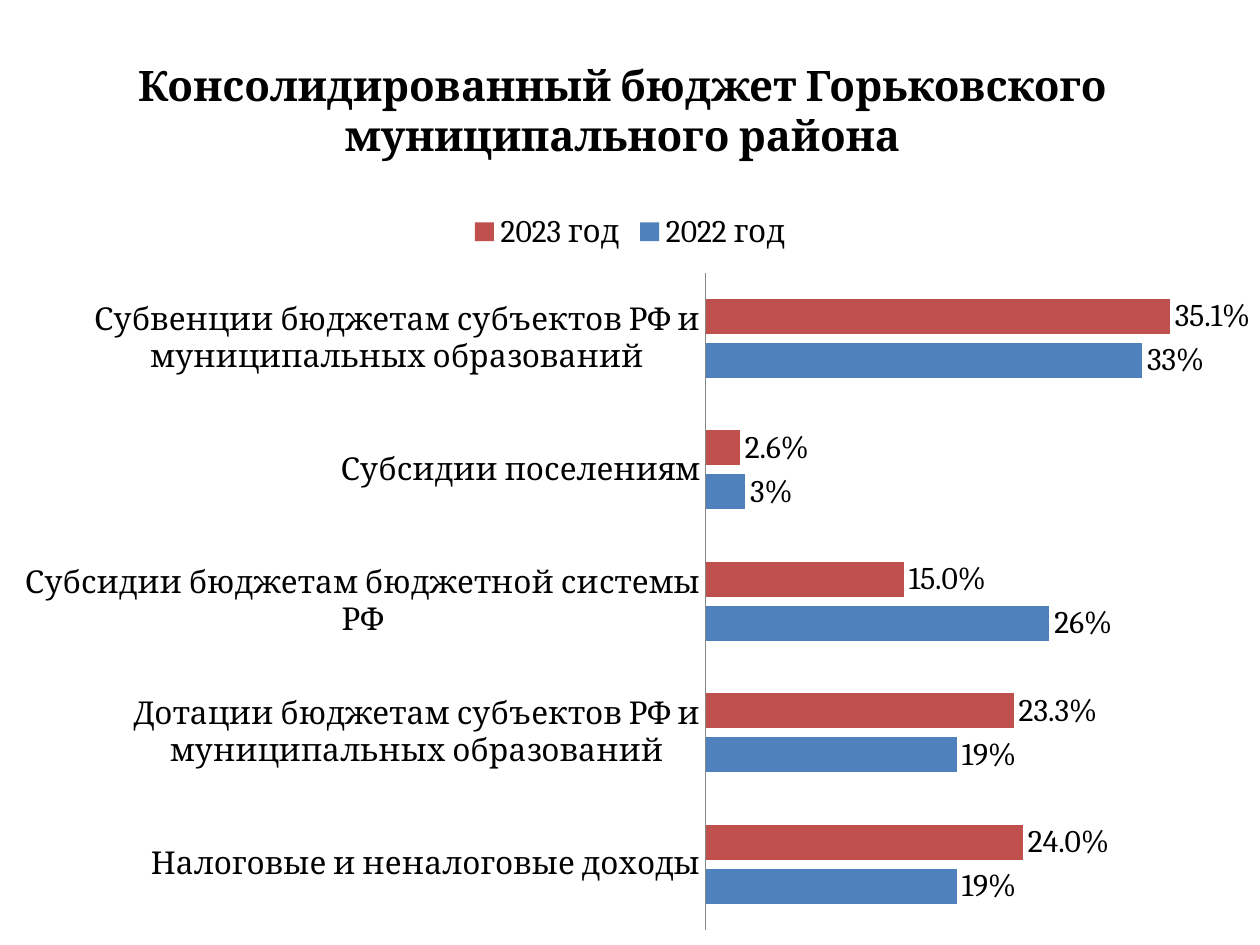
import pptx
import pptx.chart.data
import pptx.dml.color
import pptx.enum.chart
import pptx.enum.text
import pptx.oxml
import pptx.oxml.ns
import pptx.util

Cm = pptx.util.Cm
Pt = pptx.util.Pt
enums = pptx.enum.chart

THEME = {
    "font": "Cambria",
    "title_size": Pt(24),
    "chart_size": Pt(18),
    "text": pptx.dml.color.RGBColor.from_string("000000"),
    "axis": pptx.dml.color.RGBColor.from_string("878787"),
    "2022": pptx.dml.color.RGBColor.from_string("4F81BD"),
    "2023": pptx.dml.color.RGBColor.from_string("C0504D"),
}


def format_font(font, size, bold=False):
    for name, value in {"name": THEME["font"], "size": size, "bold": bold}.items():
        setattr(font, name, value)
    font.color.rgb = THEME["text"]


deck = pptx.Presentation()
deck.slide_width, deck.slide_height = Cm(25.4), Cm(19.05)
page = deck.slides.add_slide(deck.slide_layouts[5])

# Title
title = page.shapes.title
title_place = {"left": Cm(0.2), "top": Cm(0.43), "width": Cm(24.7), "height": Cm(3.56)}
for name, value in title_place.items():
    setattr(title, name, value)
frame = title.text_frame
frame_format = {
    "margin_left": 0, "margin_right": 0, "margin_top": 0, "margin_bottom": 0,
    "word_wrap": True, "vertical_anchor": pptx.enum.text.MSO_ANCHOR.MIDDLE,
}
for name, value in frame_format.items():
    setattr(frame, name, value)
para = frame.paragraphs[0]
para.alignment = pptx.enum.text.PP_ALIGN.CENTER
span = para.add_run()
span.text = "Консолидированный бюджет Горьковского муниципального района"
format_font(span.font, THEME["title_size"], bold=True)

# Budget shares, listed from the bottom bar up: 2022, 2023
shares = {
    "Налоговые и неналоговые доходы": (0.19, 0.24),
    "Дотации бюджетам субъектов РФ и муниципальных образований": (0.19, 0.233),
    "Субсидии бюджетам бюджетной системы РФ": (0.26, 0.15),
    "Субсидии поселениям": (0.03, 0.026),
    "Субвенции бюджетам субъектов РФ и муниципальных образований": (0.33, 0.351),
}
years = {"2022": "0%", "2023": "0.0%"}
data = pptx.chart.data.CategoryChartData()
data.categories = list(shares)
for (year, number_format), values in zip(years.items(), zip(*shares.values())):
    data.add_series(f"{year} год", values, number_format)

# Bar chart
chart = page.shapes.add_chart(
    enums.XL_CHART_TYPE.BAR_CLUSTERED, Cm(0), Cm(3.99), Cm(25.4), Cm(15.06), data
).chart
format_font(chart.font, THEME["chart_size"])
chart.has_title = False
chart.has_legend = True
chart.legend.position = enums.XL_LEGEND_POSITION.TOP
chart.legend.include_in_layout = False
format_font(chart.legend.font, THEME["chart_size"])

plot = chart.plots[0]
for name, value in {"gap_width": 150, "overlap": -25, "vary_by_categories": False}.items():
    setattr(plot, name, value)
for series, (year, number_format) in zip(plot.series, years.items()):
    series.format.fill.solid()
    series.format.fill.fore_color.rgb = THEME[year]
    labels = series.data_labels
    label_format = {
        "show_value": True, "number_format": number_format,
        "number_format_is_linked": False,
        "position": enums.XL_LABEL_POSITION.OUTSIDE_END,
    }
    for name, value in label_format.items():
        setattr(labels, name, value)
    format_font(labels.font, THEME["chart_size"])

# Axes
categories = chart.category_axis
categories.major_tick_mark = enums.XL_TICK_MARK.NONE
categories.has_major_gridlines = False
categories.format.line.color.rgb = THEME["axis"]
categories.format.line.width = Pt(0.75)
format_font(categories.tick_labels.font, THEME["chart_size"])
scale = chart.value_axis
axis_format = {
    "minimum_scale": 0, "maximum_scale": 0.4,
    "has_major_gridlines": False, "visible": False,
}
for name, value in axis_format.items():
    setattr(scale, name, value)
scale.tick_labels.number_format = "0%"
scale.tick_labels.number_format_is_linked = False

# Plot area as fractions of the chart, leaving room for the long categories
plot_area = chart.element.xpath("c:chart/c:plotArea")[0]
for layout in plot_area.xpath("c:layout"):
    plot_area.remove(layout)
edges = "".join(f'<c:{side}Mode val="edge"/>' for side in "xy")
fractions = {"x": 0.56, "y": 0.1, "w": 0.42, "h": 0.88}
sizes = "".join(f'<c:{side} val="{value}"/>' for side, value in fractions.items())
plot_area.insert(0, pptx.oxml.parse_xml(
    f'<c:layout {pptx.oxml.ns.nsdecls("c")}><c:manualLayout>'
    f'<c:layoutTarget val="inner"/>{edges}{sizes}</c:manualLayout></c:layout>'
))

deck.save("out.pptx")
